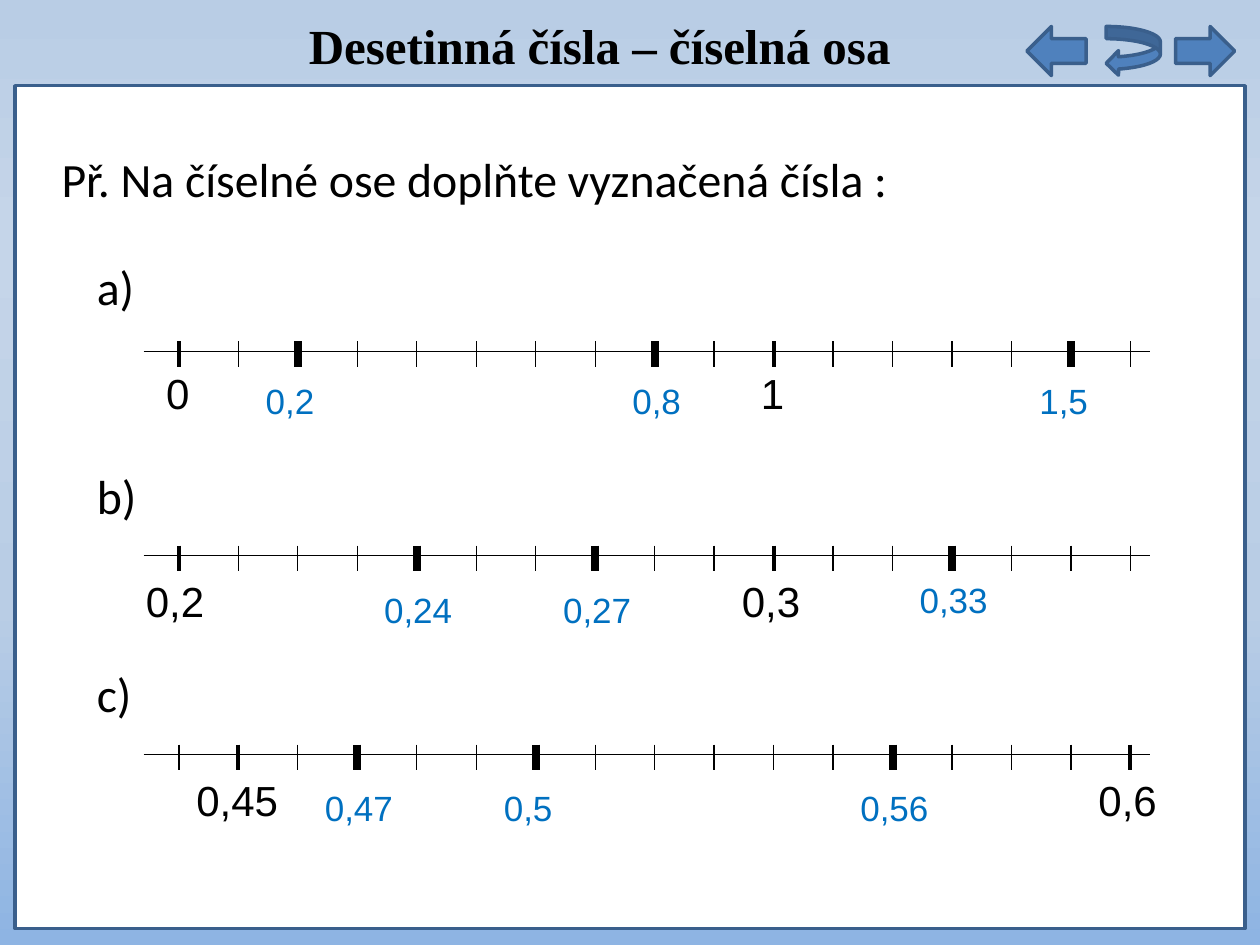
from dataclasses import dataclass

from lxml import etree
from pptx import Presentation
from pptx.dml.color import RGBColor
from pptx.enum.shapes import MSO_CONNECTOR, MSO_SHAPE
from pptx.enum.text import MSO_ANCHOR, PP_ALIGN
from pptx.oxml.ns import qn
from pptx.util import Inches, Pt

STRAIGHT = MSO_CONNECTOR.STRAIGHT
RECTANGLE = MSO_SHAPE.RECTANGLE
LEFT_ARROW = MSO_SHAPE.LEFT_ARROW
RETURN_ARROW = MSO_SHAPE.CURVED_LEFT_ARROW
RIGHT_ARROW = MSO_SHAPE.RIGHT_ARROW
TOP, MIDDLE = MSO_ANCHOR.TOP, MSO_ANCHOR.MIDDLE
LEFT, CENTER = PP_ALIGN.LEFT, PP_ALIGN.CENTER

BLACK, WHITE, ANSWER_BLUE = "000000", "FFFFFF", "0070C0"
ARROW_BLUE, BORDER_BLUE = "4F81BD", "3A5F8C"
BACKGROUND_STOPS = [(0, "B9CDE5"), (25, "C5D5E9"), (64, "B9CDE5"), (100, "8EB4E3")]

FIRST_TICK, TICK_STEP, TICK_COUNT = 1.42, 0.472, 17
AXIS_START, AXIS_END = 1.14, 9.13
THIN, KNOWN_WEIGHT, ANSWER_WEIGHT = 0.75, 2.25, 4.5


@dataclass
class Label:
    tick: int
    text: str
    left: float
    top: float
    width: float


NUMBER_LINES = [
    ("a)", 2, 2.79,
     [Label(0, "0", 1.22, 2.87, 0.71), Label(10, "1", 5.94, 2.87, 0.39)],
     [Label(2, "0,2", 2.01, 2.96, 0.87), Label(8, "0,8", 4.92, 2.96, 0.63),
      Label(15, "1,5", 8.15, 2.96, 0.71)]),
    ("b)", 3.66, 4.41,
     [Label(0, "0,2", 1.06, 4.52, 0.86), Label(10, "0,3", 5.79, 4.52, 0.87)],
     [Label(4, "0,24", 2.95, 4.62, 0.87), Label(7, "0,27", 4.37, 4.62, 0.79),
      Label(13, "0,33", 7.2, 4.54, 0.87)]),
    ("c)", 5.23, 5.99,
     [Label(1, "0,45", 1.46, 6.1, 0.87), Label(16, "0,6", 8.62, 6.1, 0.87)],
     [Label(3, "0,47", 2.48, 6.19, 0.87), Label(6, "0,5", 3.9, 6.19, 0.79),
      Label(12, "0,56", 6.73, 6.19, 0.87)]),
]


def color(value):
    return RGBColor.from_string(value)


class Worksheet:
    def __init__(self, slide):
        self.slide = slide

    def background(self, stops):
        fill = self.slide.background.fill
        fill.gradient()
        fill.gradient_angle = 270
        stop_list = self.slide.element.find(".//" + qn("a:gsLst"))
        for old_stop in list(stop_list):
            stop_list.remove(old_stop)
        for position, value in stops:
            stop = etree.SubElement(stop_list, qn("a:gs"), pos=str(position * 1000))
            etree.SubElement(stop, qn("a:srgbClr"), val=value)

    def shape(self, kind, left, top, width, height, fill):
        shape = self.slide.shapes.add_shape(
            kind, Inches(left), Inches(top), Inches(width), Inches(height))
        shape.shadow.inherit = False
        shape.fill.solid()
        shape.fill.fore_color.rgb = color(fill)
        shape.line.color.rgb = color(BORDER_BLUE)
        shape.line.width = Pt(2)

    def line(self, x1, y1, x2, y2, weight):
        connector = self.slide.shapes.add_connector(
            STRAIGHT, Inches(x1), Inches(y1), Inches(x2), Inches(y2))
        connector.line.color.rgb = color(BLACK)
        connector.line.width = Pt(weight)
        etree.SubElement(connector.element.spPr, qn("a:effectLst"))

    def text(self, text, left, top, width, height, font, size,
             fill=BLACK, bold=False, align=LEFT, anchor=MIDDLE):
        box = self.slide.shapes.add_textbox(
            Inches(left), Inches(top), Inches(width), Inches(height))
        frame = box.text_frame
        frame.word_wrap = True
        frame.vertical_anchor = anchor
        paragraph = frame.paragraphs[0]
        paragraph.alignment = align
        run = paragraph.add_run()
        run.text = text
        run.font.name = font
        run.font.size = Pt(size)
        run.font.bold = bold
        run.font.color.rgb = color(fill)
        return paragraph

    def label(self, label, size, fill):
        paragraph = self.text(label.text, label.left, label.top, label.width, 0.47,
                              "Arial", size, fill, anchor=TOP)
        properties = paragraph._p.get_or_add_pPr()
        properties.set("marL", str(Inches(0.38)))
        properties.set("indent", str(-Inches(0.38)))
        spacing = etree.SubElement(properties, qn("a:spcBef"))
        etree.SubElement(spacing, qn("a:spcPct"), val="20000")

    def number_line(self, name, name_top, axis, known, answers):
        self.text(name, 0.67, name_top, 7.17, 0.55, "Calibri", 27.3)
        self.line(AXIS_START, axis, AXIS_END, axis, THIN)
        weights = {label.tick: KNOWN_WEIGHT for label in known}
        weights.update({label.tick: ANSWER_WEIGHT for label in answers})
        for tick in range(TICK_COUNT):
            x = FIRST_TICK + tick * TICK_STEP
            self.line(x, axis - 0.08, x, axis + 0.12, weights.get(tick, THIN))
        for label in known:
            self.label(label, 24, BLACK)
        for label in answers:
            self.label(label, 20, ANSWER_BLUE)


def main():
    presentation = Presentation()
    presentation.slide_width = Inches(10)
    presentation.slide_height = Inches(7.5)
    worksheet = Worksheet(presentation.slides.add_slide(presentation.slide_layouts[6]))

    worksheet.background(BACKGROUND_STOPS)
    worksheet.shape(RECTANGLE, 0.12, 0.68, 9.76, 6.69, WHITE)
    worksheet.text("Desetinná čísla – číselná osa", 0.5, -0.03, 8.52, 0.77,
                   "Times New Roman", 28, bold=True, align=CENTER)
    for kind, left, width in [(LEFT_ARROW, 8.15, 0.47), (RETURN_ARROW, 8.78, 0.43),
                              (RIGHT_ARROW, 9.33, 0.47)]:
        worksheet.shape(kind, left, 0.21, width, 0.39, ARROW_BLUE)
    worksheet.text("Př. Na číselné ose doplňte vyznačená čísla :",
                   0.39, 1.14, 7.17, 0.55, "Calibri", 27.3)
    for number_line in NUMBER_LINES:
        worksheet.number_line(*number_line)

    presentation.save("out.pptx")


if __name__ == "__main__":
    main()
